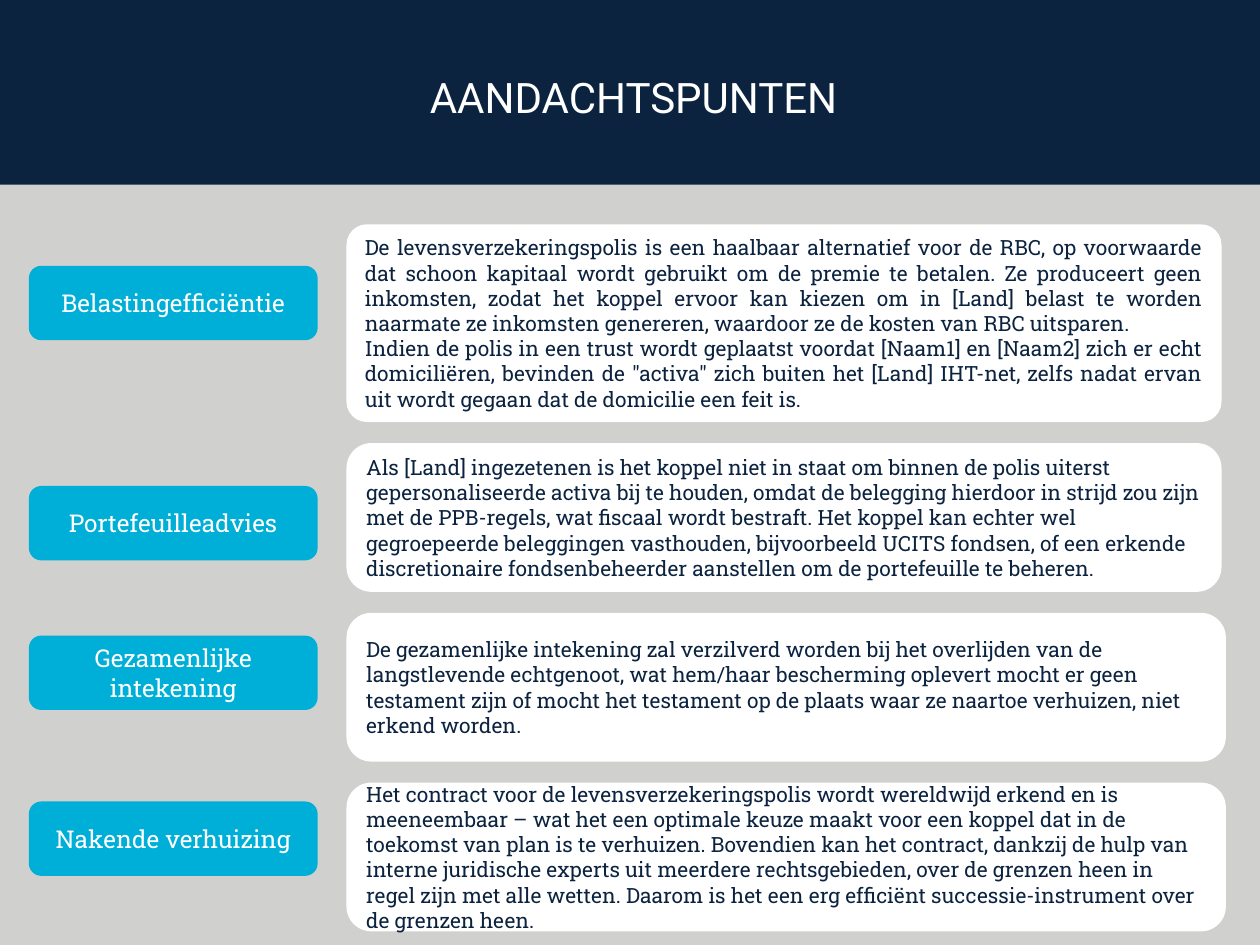
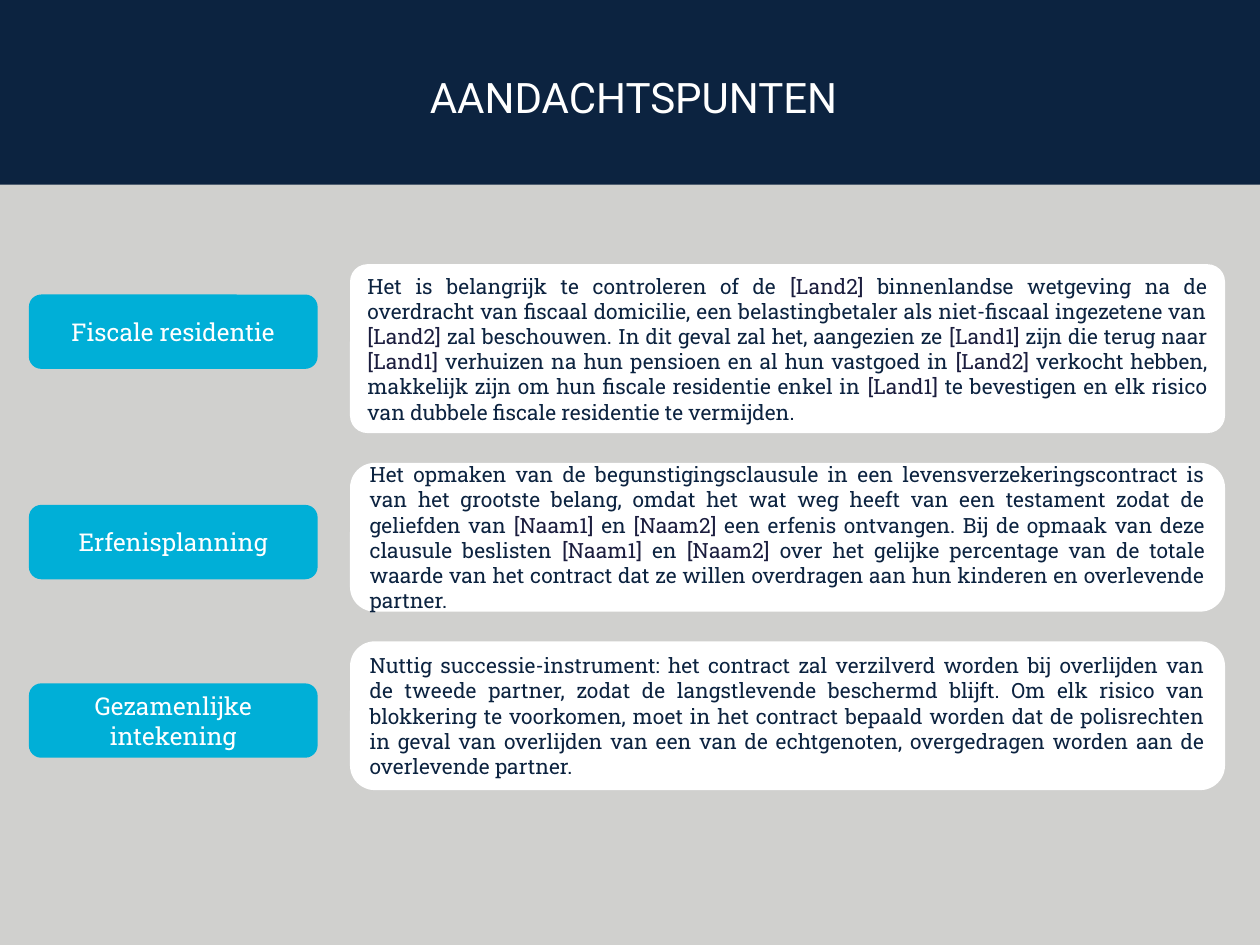
"""Build two slides of points of attention about a life insurance policy."""
from pptx import Presentation
from pptx.dml.color import RGBColor
from pptx.enum import shapes, text
from pptx.util import Pt

NAVY, PLUM, CYAN = "0C2340", "1B1D3E", "00AFD7"
GREY, WHITE = "D0D0CE", "FFFFFF"
SANS, SLAB = "Roboto", "Roboto Slab"
LEFT, MID, JUST = text.PP_ALIGN.LEFT, text.PP_ALIGN.CENTER, text.PP_ALIGN.JUSTIFY
BOX, ROUND = shapes.MSO_SHAPE.RECTANGLE, shapes.MSO_SHAPE.ROUNDED_RECTANGLE


def tint(code):
    return RGBColor.from_string(code)


class Deck:
    def __init__(self):
        self.prs = Presentation()
        self.prs.slide_width, self.prs.slide_height = Pt(720), Pt(540)
        self.slide = None

    def page(self, title):
        self.slide = self.prs.slides.add_slide(self.prs.slide_layouts[5])
        fill = self.slide.background.fill
        fill.solid()
        fill.fore_color.rgb = tint(GREY)
        head = self.slide.shapes.title
        head.left, head.top, head.width, head.height = Pt(60), Pt(37.5), Pt(604), Pt(36)
        band = self.shape(BOX, 0, 0, 720, 105.5, NAVY)
        head.element.addprevious(band.element)
        frame = head.text_frame
        frame.vertical_anchor = text.MSO_ANCHOR.TOP
        frame.auto_size = text.MSO_AUTO_SIZE.SHAPE_TO_FIT_TEXT
        self.words(frame.paragraphs[0], [(title, WHITE)], MID, 24, SANS)

    def shape(self, kind, x, y, w, h, fill):
        item = self.slide.shapes.add_shape(kind, Pt(x), Pt(y), Pt(w), Pt(h))
        item.shadow.inherit = False
        item.fill.solid()
        item.fill.fore_color.rgb = tint(fill)
        item.line.fill.background()
        item.text_frame.word_wrap = True
        item.text_frame.vertical_anchor = text.MSO_ANCHOR.MIDDLE
        return item

    def words(self, para, runs, align, size, face):
        para.alignment = align
        for part, code in runs:
            run = para.add_run()
            run.text = part
            run.font.size, run.font.name = Pt(size), face
            run.font.color.rgb = tint(code)

    def label(self, y, name):
        item = self.shape(ROUND, 16.5, y, 165, 42.5, CYAN)
        self.words(item.text_frame.paragraphs[0], [(name, WHITE)], MID, 14, SLAB)

    def card(self, x, y, w, h, paras, align, tag):
        item = self.shape(ROUND, x, y, w, h, WHITE)
        if h > 85:
            item.adjustments[0] = 0.103
        frame = item.text_frame
        for i, prose in enumerate(paras):
            para = frame.add_paragraph() if i else frame.paragraphs[0]
            parts = prose.replace("[", "|[").replace("] ", "] |").split("|")
            runs = [(part, tag if part[0] == "[" else NAVY) for part in parts if part]
            self.words(para, runs, align, 12, SLAB)

    def rows(self, x, y, gap, tag, items):
        for name, drop, w, h, align, paras in items:
            self.card(x, y, w, h, paras, align, tag)
            self.label(y + drop, name)
            y += h + gap


FIRST = [
    ("Belastingefficiëntie", 23.7, 500, 113, JUST, [
        "De levensverzekeringspolis is een haalbaar alternatief voor de RBC, op "
        "voorwaarde dat schoon kapitaal wordt gebruikt om de premie te betalen. Ze "
        "produceert geen inkomsten, zodat het koppel ervoor kan kiezen om in [Land] "
        "belast te worden naarmate ze inkomsten genereren, waardoor ze de kosten van "
        "RBC uitsparen.",
        "Indien de polis in een trust wordt geplaatst voordat [Naam1] en [Naam2] zich "
        "er echt domiciliëren, bevinden de \"activa\" zich buiten het [Land] IHT-net, "
        "zelfs nadat ervan uit wordt gegaan dat de domicilie een feit is."]),
    ("Portefeuilleadvies", 24.5, 500, 85, LEFT, [
        "Als [Land] ingezetenen is het koppel niet in staat om binnen de polis uiterst "
        "gepersonaliseerde activa bij te houden, omdat de belegging hierdoor in strijd "
        "zou zijn met de PPB-regels, wat fiscaal wordt bestraft. Het koppel kan echter "
        "wel gegroepeerde beleggingen vasthouden, bijvoorbeeld UCITS fondsen, of een "
        "erkende discretionaire fondsenbeheerder aanstellen om de portefeuille te "
        "beheren."]),
    ("Gezamenlijke intekening", 13, 502.5, 85, LEFT, [
        "De gezamenlijke intekening zal verzilverd worden bij het overlijden van de "
        "langstlevende echtgenoot, wat hem/haar bescherming oplevert mocht er geen "
        "testament zijn of mocht het testament op de plaats waar ze naartoe verhuizen, "
        "niet erkend worden."]),
    ("Nakende verhuizing", 10.8, 502.5, 85, LEFT, [
        "Het contract voor de levensverzekeringspolis wordt wereldwijd erkend en is "
        "meeneembaar – wat het een optimale keuze maakt voor een koppel dat in de "
        "toekomst van plan is te verhuizen. Bovendien kan het contract, dankzij de hulp "
        "van interne juridische experts uit meerdere rechtsgebieden, over de grenzen "
        "heen in regel zijn met alle wetten. Daarom is het een erg efficiënt "
        "successie-instrument over de grenzen heen."]),
]

SECOND = [
    ("Fiscale residentie", 17.3, 500, 96.5, JUST, [
        "Het is belangrijk te controleren of de [Land2] binnenlandse wetgeving na de "
        "overdracht van fiscaal domicilie, een belastingbetaler als niet-fiscaal "
        "ingezetene van [Land2] zal beschouwen. In dit geval zal het, aangezien ze "
        "[Land1] zijn die terug naar [Land1] verhuizen na hun pensioen en al hun "
        "vastgoed in [Land2] verkocht hebben, makkelijk zijn om hun fiscale residentie "
        "enkel in [Land1] te bevestigen en elk risico van dubbele fiscale residentie te "
        "vermijden."]),
    ("Erfenisplanning", 24, 500, 85, JUST, [
        "Het opmaken van de begunstigingsclausule in een levensverzekeringscontract is "
        "van het grootste belang, omdat het wat weg heeft van een testament zodat de "
        "geliefden van [Naam1] en [Naam2] een erfenis ontvangen. Bij de opmaak van deze "
        "clausule beslisten [Naam1] en [Naam2] over het gelijke percentage van de totale "
        "waarde van het contract dat ze willen overdragen aan hun kinderen en "
        "overlevende partner."]),
    ("Gezamenlijke intekening", 24, 500, 85, JUST, [
        "Nuttig successie-instrument: het contract zal verzilverd worden bij overlijden "
        "van de tweede partner, zodat de langstlevende beschermd blijft. Om elk risico "
        "van blokkering te voorkomen, moet in het contract bepaald worden dat de "
        "polisrechten in geval van overlijden van een van de echtgenoten, overgedragen "
        "worden aan de overlevende partner."]),
]


def main():
    deck = Deck()
    deck.page("AANDACHTSPUNTEN")
    deck.rows(198, 128.2, 12, NAVY, FIRST)
    deck.page("AANDACHTSPUNTEN")
    deck.rows(200, 151, 17, PLUM, SECOND)
    deck.prs.save("out.pptx")


if __name__ == "__main__":
    main()
